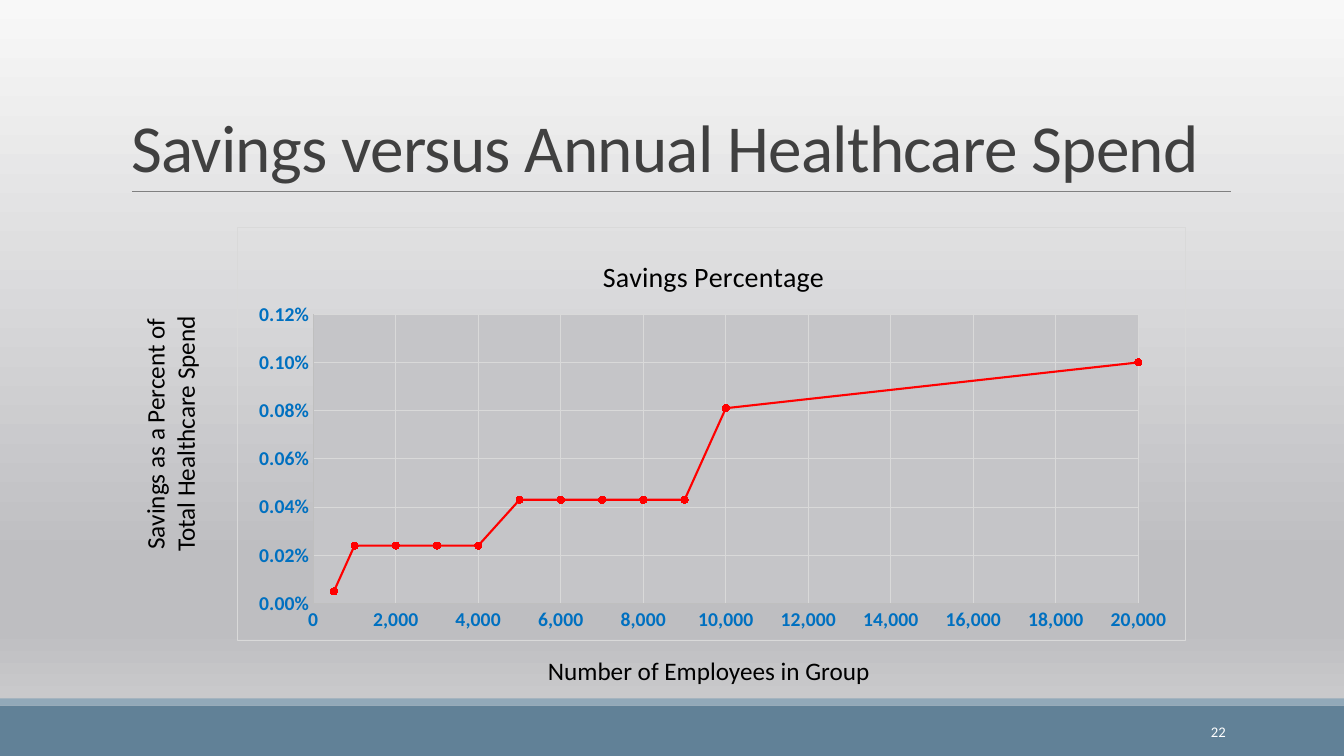
"""Build the slide on savings against annual healthcare spend."""
import lxml.etree
import pptx
import pptx.chart.data
import pptx.dml.color
import pptx.enum.chart
import pptx.enum.shapes
import pptx.enum.text
import pptx.oxml.ns
import pptx.oxml.xmlchemy
import pptx.util

Cm, Pt = pptx.util.Cm, pptx.util.Pt
qn = pptx.oxml.ns.qn
ALIGN = pptx.enum.text.PP_ALIGN
ANCHOR = pptx.enum.text.MSO_ANCHOR
FONT = "Calibri"
WIDTH, HEIGHT = 33.87, 19.05

HEADING = "Savings versus Annual Healthcare Spend"
CHART_HEADING = "Savings Percentage"
EMPLOYEES_LABEL = ["Number of Employees in Group"]
SAVINGS_LABEL = ["Savings as a Percent of", "Total Healthcare Spend"]
PAGE = ["22"]
SAVINGS = [
    (500, 0.00005), (1000, 0.00024), (2000, 0.00024), (3000, 0.00024),
    (4000, 0.00024), (5000, 0.00043), (6000, 0.00043), (7000, 0.00043),
    (8000, 0.00043), (9000, 0.00043), (10000, 0.00081), (20000, 0.001),
]
BACKDROP = [(0, "F8F8F8"), (74, "BEBEC1"), (83, "BEBEC1"), (100, "D4D4D5")]
BANDS = [(17.78, 1.27, "618197"), (17.6, 0.18, "92A9B9")]
RED, AXIS_BLUE, GRID, AXIS_LINE = "FF0000", "0070C0", "D9D9D9", "BFBFBF"


def rgb(code):
    return pptx.dml.color.RGBColor.from_string(code)


def paint(fill, code):
    fill.solid()
    fill.fore_color.rgb = rgb(code)


def stroke(line, code, width):
    paint(line.fill, code)
    line.width = Pt(width)


def style(font, size, code, bold=False):
    font.name, font.size, font.bold = FONT, Pt(size), bold
    font.color.rgb = rgb(code)


def add_label(slide, lines, box, size, code, align, anchor=ANCHOR.TOP, wrap=False):
    label = slide.shapes.add_textbox(*map(Cm, box))
    frame = label.text_frame
    frame.word_wrap, frame.vertical_anchor = wrap, anchor
    for number, line in enumerate(lines):
        paragraph = frame.add_paragraph() if number else frame.paragraphs[0]
        paragraph.alignment = align
        run = paragraph.add_run()
        run.text = line
        style(run.font, size, code)
    return label


def place(parent, index, **position):
    """Give a chart part a manual layout in fractions of the chart."""
    for old in parent.findall(qn("c:layout")):
        parent.remove(old)
    layout = pptx.oxml.xmlchemy.OxmlElement("c:layout")
    manual = lxml.etree.SubElement(layout, qn("c:manualLayout"))
    if "w" in position:
        lxml.etree.SubElement(manual, qn("c:layoutTarget")).set("val", "inner")
    for side in "xy":
        lxml.etree.SubElement(manual, qn(f"c:{side}Mode")).set("val", "edge")
    for key, value in position.items():
        lxml.etree.SubElement(manual, qn(f"c:{key}")).set("val", str(value))
    parent.insert(index, layout)


def add_color(parent, code):
    """Add a solid fill, or no fill when there is no colour."""
    if code:
        solid = lxml.etree.SubElement(parent, qn("a:solidFill"))
        lxml.etree.SubElement(solid, qn("a:srgbClr")).set("val", code)
    else:
        lxml.etree.SubElement(parent, qn("a:noFill"))


def shape_properties(fill, border):
    """Return chart shape properties with an optional fill and border."""
    properties = pptx.oxml.xmlchemy.OxmlElement("c:spPr")
    add_color(properties, fill)
    line = lxml.etree.SubElement(properties, qn("a:ln"))
    line.set("w", str(int(Pt(0.75))))
    add_color(line, border)
    return properties


def add_backdrop(slide):
    fill = slide.background.fill
    fill.gradient()
    gradient = slide.element.find(".//" + qn("a:gradFill"))
    stops = gradient.find(qn("a:gsLst"))
    for stop in list(stops):
        stops.remove(stop)
    for percent, code in BACKDROP:
        stop = lxml.etree.SubElement(stops, qn("a:gs"), pos=str(percent * 1000))
        lxml.etree.SubElement(stop, qn("a:srgbClr"), val=code)
    gradient.find(qn("a:lin")).set("ang", "5400000")

    for top, height, code in BANDS:
        band = slide.shapes.add_shape(
            pptx.enum.shapes.MSO_SHAPE.RECTANGLE, 0, Cm(top), Cm(WIDTH), Cm(height))
        band.shadow.inherit = False
        paint(band.fill, code)
        band.line.fill.background()
    rule = slide.shapes.add_connector(
        pptx.enum.shapes.MSO_CONNECTOR.STRAIGHT, Cm(3.33), Cm(4.83), Cm(31.01), Cm(4.83))
    stroke(rule.line, "808080", 0.5)
    lxml.etree.SubElement(rule.element.spPr, qn("a:effectLst"))


def add_heading(slide):
    heading = slide.shapes.title
    heading.left, heading.top, heading.width, heading.height = map(
        Cm, (3.05, 0.79, 27.94, 4.04))
    frame = heading.text_frame
    frame.vertical_anchor, frame.word_wrap = ANCHOR.BOTTOM, True
    frame.auto_size = pptx.enum.text.MSO_AUTO_SIZE.NONE
    paragraph = frame.paragraphs[0]
    paragraph.alignment, paragraph.line_spacing = ALIGN.LEFT, 0.85
    run = paragraph.add_run()
    run.text = HEADING
    style(run.font, 48, "404040")
    heading.element.find(".//" + qn("a:rPr")).set("spc", "-50")


def add_savings_chart(slide):
    savings = pptx.chart.data.XyChartData()
    points = savings.add_series("Series 1")
    for employees, share in SAVINGS:
        points.add_data_point(employees, share)
    chart = slide.shapes.add_chart(
        pptx.enum.chart.XL_CHART_TYPE.XY_SCATTER_LINES,
        *map(Cm, (5.97, 5.72, 23.93, 10.44)), savings).chart
    style(chart.font, 10, "000000")
    chart.has_legend = False
    chart.plots[0].vary_by_categories = False

    chart.has_title = True
    run = chart.chart_title.text_frame.paragraphs[0].add_run()
    run.text = CHART_HEADING
    style(run.font, 20, "000000")
    place(chart.element.find(".//" + qn("c:title")), 1, x=0.38, y=0.06)

    for axis, top, step, pattern in (
            (chart.category_axis, 20000, 2000, "#,##0"),
            (chart.value_axis, 0.0012, 0.0002, "0.00%")):
        axis.minimum_scale, axis.maximum_scale, axis.major_unit = 0, top, step
        axis.has_major_gridlines = True
        stroke(axis.major_gridlines.format.line, GRID, 0.75)
        stroke(axis.format.line, AXIS_LINE, 0.75)
        axis.major_tick_mark = axis.minor_tick_mark = pptx.enum.chart.XL_TICK_MARK.NONE
        axis.tick_labels.number_format = pattern
        axis.tick_labels.number_format_is_linked = False
        style(axis.tick_labels.font, 14, AXIS_BLUE, True)

    series = chart.plots[0].series[0]
    stroke(series.format.line, RED, 1.5)
    series.marker.style = pptx.enum.chart.XL_MARKER_STYLE.CIRCLE
    series.marker.size = 5
    paint(series.marker.format.fill, RED)
    stroke(series.marker.format.line, RED, 0.75)

    plot_area = chart.element.find(".//" + qn("c:plotArea"))
    place(plot_area, 0, x=0.08, y=0.21, w=0.87, h=0.7)
    plot_area.append(shape_properties("C5C5C8", None))
    chart.element.find(qn("c:chart")).addnext(shape_properties(None, GRID))


def main():
    deck = pptx.Presentation()
    deck.slide_width, deck.slide_height = Cm(WIDTH), Cm(HEIGHT)
    slide = deck.slides.add_slide(deck.slide_layouts[5])
    add_backdrop(slide)
    add_heading(slide)
    add_label(slide, PAGE, (27.51, 17.93, 3.63, 1.02), 10.5, "FFFFFF",
              ALIGN.RIGHT, ANCHOR.MIDDLE, True)
    add_label(slide, EMPLOYEES_LABEL, (13.56, 16.38, 8.71, 1.8), 18, "000000", ALIGN.LEFT)
    savings_label = add_label(
        slide, SAVINGS_LABEL, (1.4, 9.65, 6.55, 2.57), 18, "000000", ALIGN.CENTER)
    savings_label.rotation = 270
    add_savings_chart(slide)
    deck.save("out.pptx")


if __name__ == "__main__":
    main()
